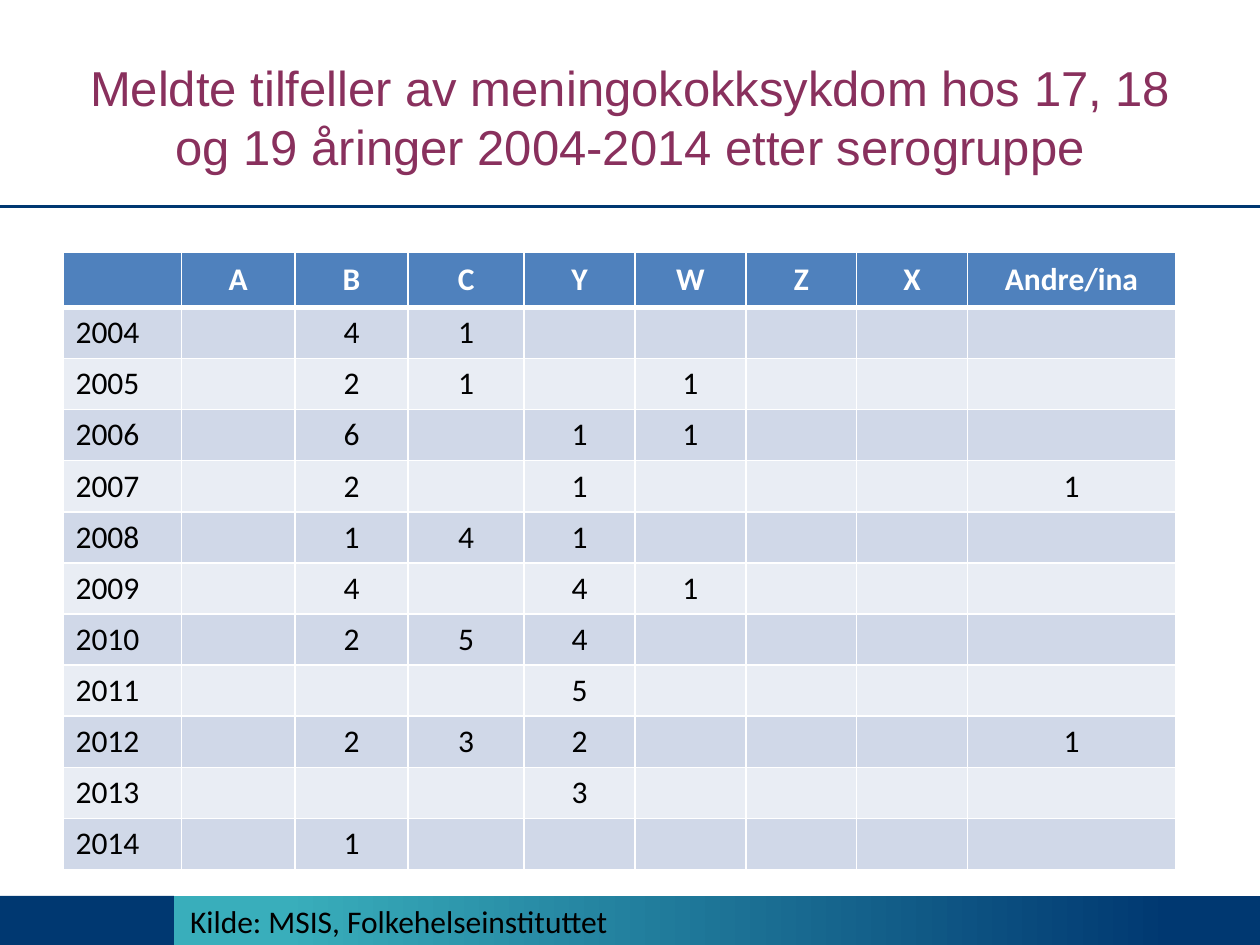
from dataclasses import dataclass

from lxml import etree
from pptx import Presentation
from pptx.dml.color import RGBColor
from pptx.enum.shapes import MSO_CONNECTOR, MSO_SHAPE
from pptx.enum.text import MSO_ANCHOR, PP_ALIGN
from pptx.oxml.ns import qn
from pptx.util import Inches, Pt

RECT = MSO_SHAPE.RECTANGLE
LINE = MSO_CONNECTOR.STRAIGHT
LEFT, CENTER = PP_ALIGN.LEFT, PP_ALIGN.CENTER
TOP, MIDDLE = MSO_ANCHOR.TOP, MSO_ANCHOR.MIDDLE


@dataclass(frozen=True)
class Theme:
    navy: str = "003871"
    teal: str = "39AEBB"
    plum: str = "89305D"
    head: str = "4F81BD"
    bands: tuple[str, str] = ("D0D8E8", "E9EDF4")
    white: str = "FFFFFF"
    black: str = "000000"
    title_font: str = "Arial"
    body_font: str = "Calibri"
    title_size: int = 28
    body_size: int = 18


@dataclass(frozen=True)
class Bar:
    left: float
    width: float
    blend: bool


@dataclass(frozen=True)
class Year:
    year: int
    cases: dict[str, int]


THEME = Theme()
BAR_TOP, BAR_TALL = 7.11, 0.39
BARS = [Bar(0, 1.38, False), Bar(1.38, 8.62, True)]
GROUPS = ["A", "B", "C", "Y", "W", "Z", "X", "Andre/ina"]
WIDTHS = [0.94, 0.9, 0.9, 0.92, 0.88, 0.88, 0.88, 0.88, 1.65]
HEAD_TALL, ROW_TALL = 0.44, 0.4
YEARS = [
    Year(2004, {"B": 4, "C": 1}),
    Year(2005, {"B": 2, "C": 1, "W": 1}),
    Year(2006, {"B": 6, "Y": 1, "W": 1}),
    Year(2007, {"B": 2, "Y": 1, "Andre/ina": 1}),
    Year(2008, {"B": 1, "C": 4, "Y": 1}),
    Year(2009, {"B": 4, "Y": 4, "W": 1}),
    Year(2010, {"B": 2, "C": 5, "Y": 4}),
    Year(2011, {"Y": 5}),
    Year(2012, {"B": 2, "C": 3, "Y": 2, "Andre/ina": 1}),
    Year(2013, {"Y": 3}),
    Year(2014, {"B": 1}),
]


def rgb(color: str) -> RGBColor:
    return RGBColor.from_string(color)


def write(frame, text: str, font: str, size: int, color: str,
          align=LEFT, bold: bool = False) -> None:
    frame.text = text
    para = frame.paragraphs[0]
    para.alignment = align
    para.font.name = font
    para.font.size = Pt(size)
    para.font.bold = bold
    para.font.color.rgb = rgb(color)


def draw_bar(slide, bar: Bar) -> None:
    shape = slide.shapes.add_shape(RECT, Inches(bar.left), Inches(BAR_TOP),
                                   Inches(bar.width), Inches(BAR_TALL))
    shape.shadow.inherit = False
    shape.line.fill.background()
    if not bar.blend:
        shape.fill.solid()
        shape.fill.fore_color.rgb = rgb(THEME.navy)
        return
    shape.fill.gradient()
    shape.fill.gradient_angle = 0
    ends = [(0.1, THEME.teal), (0.92, THEME.navy)]
    for stop, (pos, color) in zip(shape.fill.gradient_stops, ends):
        stop.position = pos
        stop.color.rgb = rgb(color)


def draw_rule(slide, top: float) -> None:
    rule = slide.shapes.add_connector(LINE, 0, Inches(top), Inches(10), Inches(top))
    rule.line.color.rgb = rgb(THEME.navy)
    rule.line.width = Pt(2)
    etree.SubElement(rule._element.spPr, qn("a:effectLst"))


def set_edges(cell, widths: dict[str, int]) -> None:
    props = cell._tc.get_or_add_tcPr()
    for side, width in widths.items():
        edge = etree.SubElement(props, qn(f"a:{side}"), w=str(Pt(width)))
        fill = etree.SubElement(edge, qn("a:solidFill"))
        etree.SubElement(fill, qn("a:srgbClr"), val=THEME.white)


def draw_cell(cell, text: str, row: int, col: int) -> None:
    head = row == 0
    # Borders come before the fill in the cell properties
    set_edges(cell, {"lnL": 1, "lnR": 1, "lnT": 3 if row == 1 else 1,
                     "lnB": 3 if head else 1})
    cell.fill.solid()
    cell.fill.fore_color.rgb = rgb(THEME.head if head else THEME.bands[(row - 1) % 2])
    cell.vertical_anchor = MIDDLE if head else TOP
    write(cell.text_frame, text, THEME.body_font, THEME.body_size,
          THEME.white if head else THEME.black,
          CENTER if head or col else LEFT, head)


def draw_table(slide) -> None:
    rows = [["", *GROUPS]]
    rows += [[str(y.year), *(str(y.cases.get(g, "")) for g in GROUPS)] for y in YEARS]
    tall = HEAD_TALL + ROW_TALL * len(YEARS)
    table = slide.shapes.add_table(len(rows), len(WIDTHS), Inches(0.5), Inches(2),
                                   Inches(sum(WIDTHS)), Inches(tall)).table
    for column, width in zip(table.columns, WIDTHS):
        column.width = Inches(width)
    for r, texts in enumerate(rows):
        table.rows[r].height = Inches(ROW_TALL if r else HEAD_TALL)
        for c, text in enumerate(texts):
            draw_cell(table.cell(r, c), text, r, c)


def main() -> None:
    deck = Presentation()
    deck.slide_width, deck.slide_height = Inches(10), Inches(7.5)
    slide = deck.slides.add_slide(deck.slide_layouts[5])

    # Footer bars and the rule below the title
    for bar in BARS:
        draw_bar(slide, bar)
    draw_rule(slide, 1.64)

    # Title
    title = slide.shapes.title
    title.left, title.top = Inches(0.5), Inches(0.3)
    title.width, title.height = Inches(9), Inches(1.25)
    title.text_frame.vertical_anchor = MIDDLE
    write(title.text_frame,
          "Meldte tilfeller av meningokokksykdom hos 17, 18 og 19 åringer "
          "2004-2014 etter serogruppe",
          THEME.title_font, THEME.title_size, THEME.plum, CENTER)

    # Cases by year and serogroup
    draw_table(slide)

    # Source of the figures
    note = slide.shapes.add_textbox(Inches(1.41), Inches(BAR_TOP),
                                    Inches(5.05), Inches(0.4))
    note.text_frame.word_wrap = True
    write(note.text_frame, "Kilde: MSIS, Folkehelseinstituttet",
          THEME.body_font, THEME.body_size, THEME.black)

    deck.save("out.pptx")


if __name__ == "__main__":
    main()
